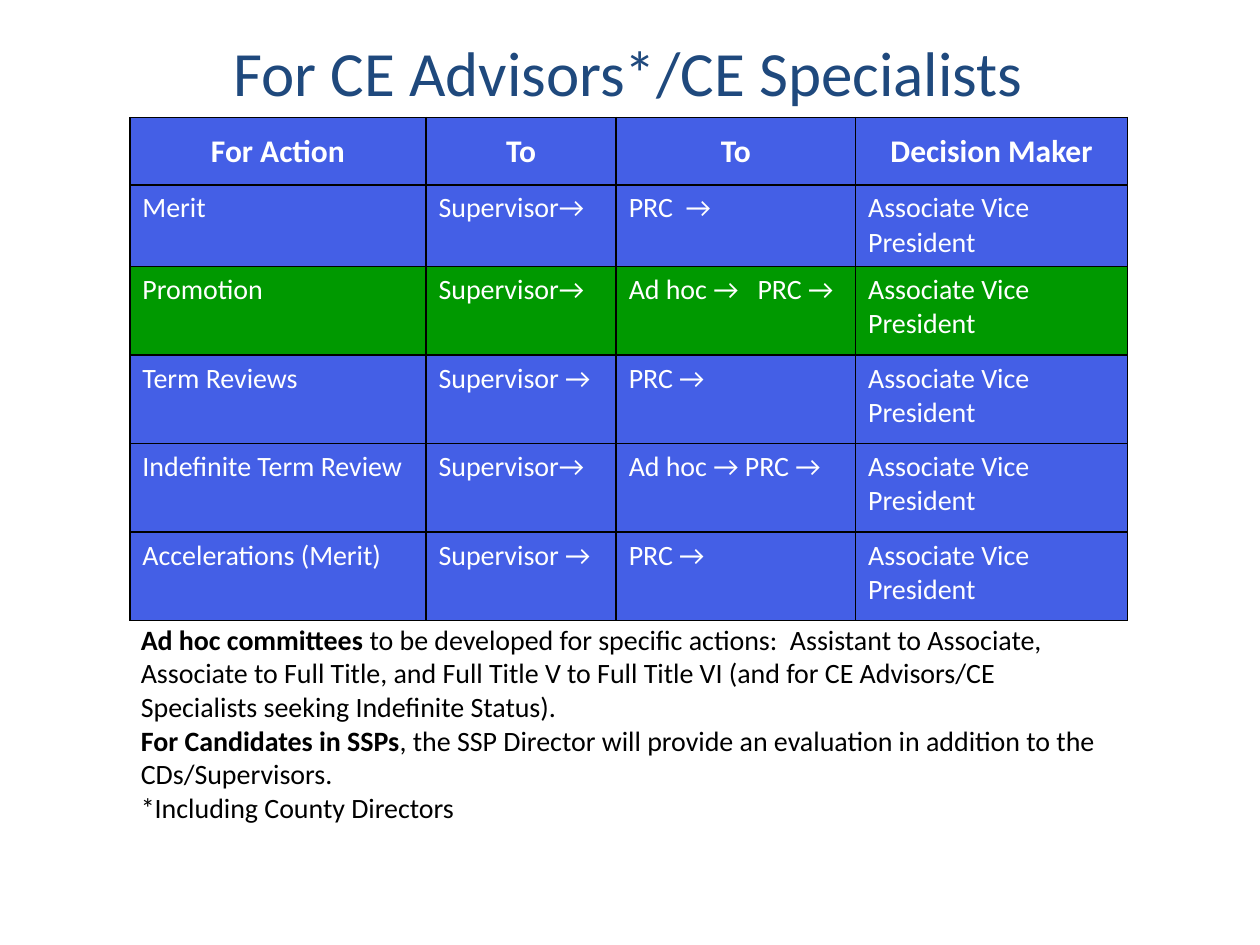
from lxml.etree import SubElement
from pptx import Presentation
from pptx.dml.color import RGBColor
from pptx.enum.text import MSO_ANCHOR as ANCHOR, MSO_AUTO_SIZE as AUTO, PP_ALIGN as ALIGN
from pptx.oxml.ns import qn
from pptx.util import Pt

BLUE, GREEN, NAVY, WHITE, BLACK = "445FE6", "009900", "1F497D", "FFFFFF", "000000"
HEADER = ["For Action", "To", "To", "Decision Maker"]
ACTIONS = [
    ("Merit", "Supervisor→", "PRC  →", BLUE),
    ("Promotion", "Supervisor→", "Ad hoc →   PRC →", GREEN),
    ("Term Reviews", "Supervisor →", "PRC →", BLUE),
    ("Indefinite Term Review", "Supervisor→", "Ad hoc → PRC →", BLUE),
    ("Accelerations (Merit)", "Supervisor →", "PRC →", BLUE),
]
DECISION_MAKER = "Associate Vice President"
COL_WIDTHS = [169.2, 108.7, 136.8, 155.5]
ROW_HEIGHTS = [38.5, 46.6] + [50.6] * 4
NOTES = [
    [("Ad hoc committees ", True),
     ("to be developed for specific actions:  Assistant to Associate, Associate to Full Title, "
      "and Full Title V to Full Title VI (and for CE Advisors/CE Specialists seeking "
      "Indefinite Status).", False)],
    [("For Candidates in SSPs", True),
     (", the SSP Director will provide an evaluation in addition to the CDs/Supervisors.", False)],
    [("*Including County Directors", False)],
]


def rgb(value):
    return RGBColor.from_string(value)


class Deck:
    """Hold the style and the current slide, and add elements to it."""

    font = "Calibri"

    def __init__(self, prs):
        self.s = prs.slides.add_slide(prs.slide_layouts[5])

    def run(self, p, text, size, color, bold=False):
        r = p.add_run()
        r.text = text
        f = r.font
        f.name, f.size, f.bold = self.font, Pt(size), bold
        f.color.rgb = rgb(color)

    def frame(self, sp):
        tf = sp.text_frame
        tf.word_wrap, tf.auto_size = True, AUTO.NONE
        tf.vertical_anchor = ANCHOR.MIDDLE
        return tf

    def title(self, text, x, y, w, h):
        sp = self.s.shapes.title
        sp.left, sp.top, sp.width, sp.height = Pt(x), Pt(y), Pt(w), Pt(h)
        p = self.frame(sp).paragraphs[0]
        p.alignment = ALIGN.CENTER
        self.run(p, text, 36, NAVY)

    def text(self, paragraphs, x, y, w, h):
        tf = self.frame(self.s.shapes.add_textbox(Pt(x), Pt(y), Pt(w), Pt(h)))
        for i, runs in enumerate(paragraphs):
            p = tf.add_paragraph() if i else tf.paragraphs[0]
            for text, bold in runs:
                self.run(p, text, 16, BLACK, bold)

    def cell(self, cell, text, fill, header):
        tcPr = cell._tc.get_or_add_tcPr()
        for side in ("a:lnL", "a:lnR", "a:lnT", "a:lnB"):
            ln = SubElement(tcPr, qn(side), w=str(Pt(1)))
            SubElement(SubElement(ln, qn("a:solidFill")), qn("a:srgbClr"), val=BLACK)
        cell.fill.solid()
        cell.fill.fore_color.rgb = rgb(fill)
        cell.vertical_anchor = ANCHOR.MIDDLE if header else ANCHOR.TOP
        p = cell.text_frame.paragraphs[0]
        p.alignment = ALIGN.CENTER if header else ALIGN.LEFT
        self.run(p, text, 18 if header else 16, WHITE, header)

    def table(self, rows, fills, x, y):
        w, h = sum(COL_WIDTHS), sum(ROW_HEIGHTS)
        tbl = self.s.shapes.add_table(len(rows), len(rows[0]), Pt(x), Pt(y), Pt(w), Pt(h)).table
        for col, width in zip(tbl.columns, COL_WIDTHS):
            col.width = Pt(width)
        for i, (row, fill) in enumerate(zip(rows, fills)):
            tbl.rows[i].height = Pt(ROW_HEIGHTS[i])
            for j, text in enumerate(row):
                self.cell(tbl.cell(i, j), text, fill, i == 0)


def main():
    prs = Presentation()
    prs.slide_width, prs.slide_height = Pt(720), Pt(540)
    deck = Deck(prs)
    deck.title("For CE Advisors*/CE Specialists", 73.4, 23, 571, 36)
    rows = [HEADER] + [[*row[:3], DECISION_MAKER] for row in ACTIONS]
    deck.table(rows, [BLUE] + [row[3] for row in ACTIONS], 74.2, 67.2)
    deck.text(NOTES, 73.4, 353.5, 570.2, 119.5)
    prs.save("out.pptx")


if __name__ == "__main__":
    main()
